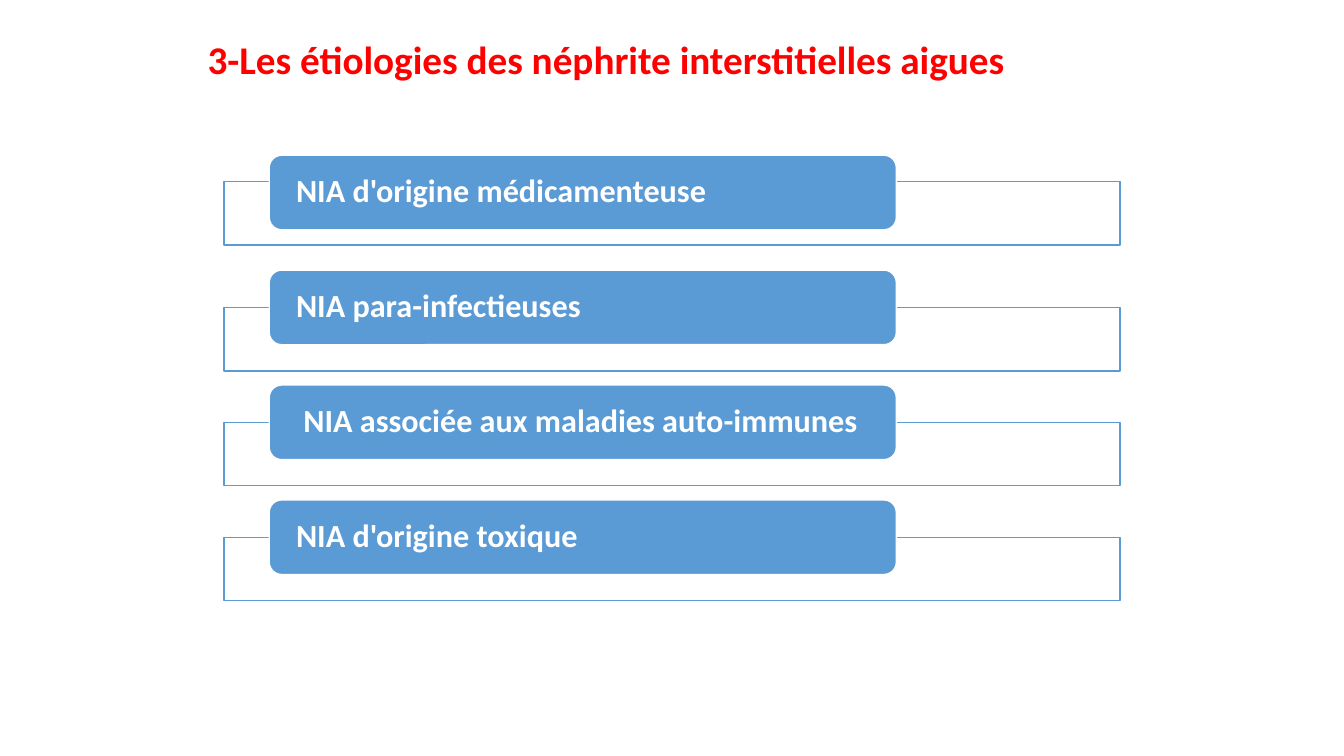
from pptx import Presentation
from pptx.dml.color import RGBColor
from pptx.enum.shapes import MSO_SHAPE
from pptx.enum.text import MSO_ANCHOR, PP_ALIGN
from pptx.util import Inches, Pt

RECT, ROUND = MSO_SHAPE.RECTANGLE, MSO_SHAPE.ROUNDED_RECTANGLE
MIDDLE = MSO_ANCHOR.MIDDLE
LEFT, CENTER = PP_ALIGN.LEFT, PP_ALIGN.CENTER
WHITE, BLUE, RED = "FFFFFF", "5B9BD5", "FF0000"

TITLE = "3-Les étiologies des néphrite interstitielles aigues"
CAUSES = [
    "NIA d'origine médicamenteuse",
    "NIA para-infectieuses",
    " NIA associée aux maladies auto-immunes",
    "NIA d'origine toxique",
]
TOP, STEP = 1.54, 1.14
FIRST_DROP, DROP = 0.26, 0.37


def color(code):
    return RGBColor.from_string(code)


def assign(target, values):
    for name, value in values.items():
        setattr(target, name, value)


class Deck:
    def __init__(self, slide):
        self.shapes = slide.shapes
        self.font = {"name": "Calibri", "bold": True}

    def label(self, shape, text, size, code, align, inset):
        frame = shape.text_frame
        assign(frame, {
            "word_wrap": True, "vertical_anchor": MIDDLE,
            "margin_left": Inches(inset), "margin_right": Inches(inset),
            "margin_top": 0, "margin_bottom": 0,
        })
        line = frame.paragraphs[0]
        assign(line, {"text": text, "alignment": align, "line_spacing": 0.9})
        assign(line.font, {**self.font, "size": Pt(size)})
        line.font.color.rgb = color(code)

    def title(self, text, *box):
        shape = self.shapes.add_textbox(*map(Inches, box))
        self.label(shape, text, 28, RED, CENTER, 0.1)

    def box(self, kind, fill, edge, *box):
        shape = self.shapes.add_shape(kind, *map(Inches, box))
        shape.shadow.inherit = False
        shape.fill.solid()
        shape.fill.fore_color.rgb = color(fill)
        shape.line.color.rgb = color(edge)
        shape.line.width = Pt(1)
        return shape

    def cause(self, text, top, drop):
        """Draw a labelled tab over its outlined frame."""
        self.box(RECT, WHITE, BLUE, 2.22, top + drop, 8.89, 0.63)
        tab = self.box(ROUND, BLUE, WHITE, 2.67, top, 6.22, 0.74)
        self.label(tab, text, 23, WHITE, LEFT, 0.23)


def main():
    show = Presentation()
    assign(show, {"slide_width": Inches(13.33), "slide_height": Inches(7.5)})
    deck = Deck(show.slides.add_slide(show.slide_layouts[6]))
    deck.title(TITLE, 0.26, -0.26, 11.5, 1.74)
    for row, text in enumerate(CAUSES):
        deck.cause(text, TOP + row * STEP, DROP if row else FIRST_DROP)
    show.save("out.pptx")


if __name__ == "__main__":
    main()
